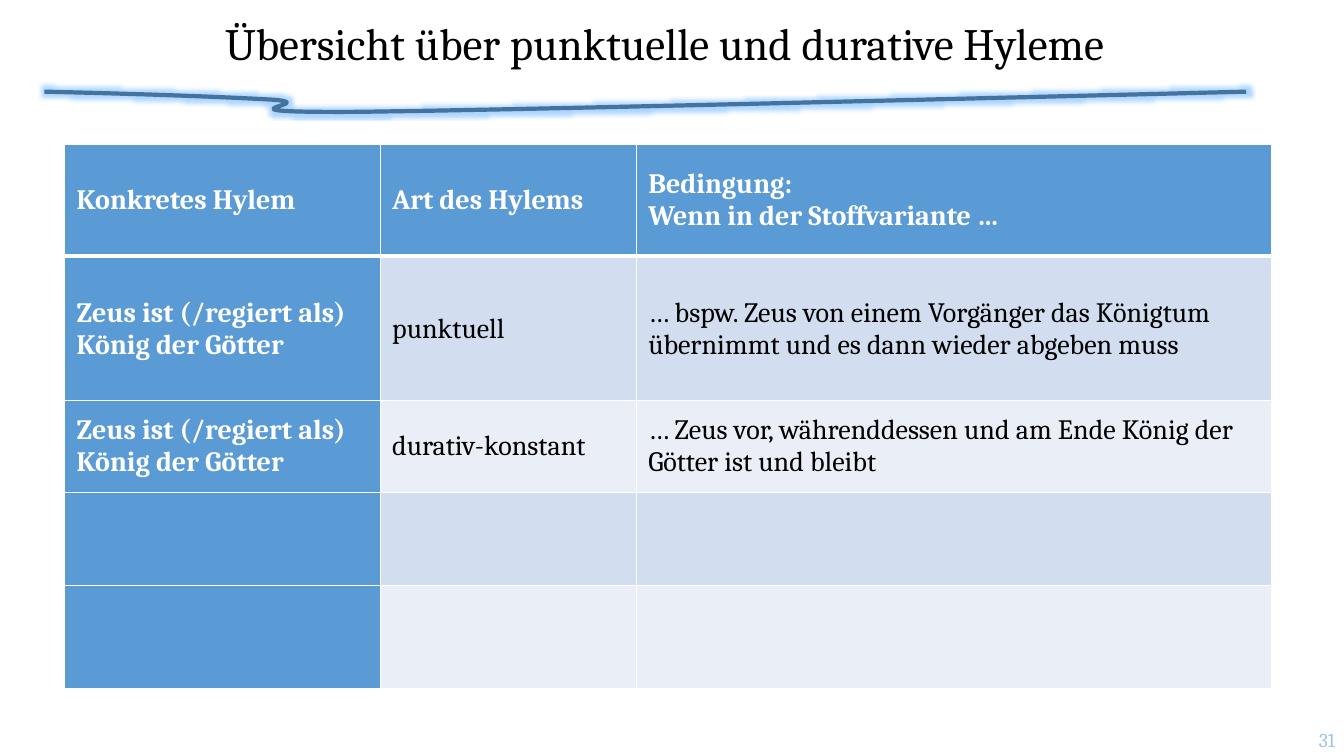
import dataclasses
import typing

import lxml.etree
import pptx
import pptx.dml.color
import pptx.enum.text
import pptx.oxml.ns
import pptx.util

Inches = pptx.util.Inches
Pt = pptx.util.Pt
Align = pptx.enum.text.PP_ALIGN
Middle = pptx.enum.text.MSO_ANCHOR.MIDDLE
Point = tuple[float, float]


@dataclasses.dataclass(frozen=True)
class Theme:
    font: str = "Cambria"
    black: str = "000000"
    white: str = "FFFFFF"
    blue: str = "5B9BD5"
    stroke: str = "43739E"
    glow: str = "3399FF"
    number: str = "9DC3E6"
    bands: tuple[str, str] = ("D2DEEF", "EAEFF7")
    title_size: int = 32
    table_size: int = 20
    number_size: int = 14


@dataclasses.dataclass(frozen=True)
class Row:
    height: float
    top: float
    bottom: float
    texts: tuple[str, str, str] = ("", "", "")


THEME = Theme()
WIDTHS = (3.13, 2.54, 6.3)
HYLEM = "Zeus ist (/regiert als) König der Götter"
ROWS = (
    Row(1.11, 0.05, 0.05, (
        "Konkretes Hylem",
        "Art des Hylems",
        "Bedingung:\nWenn in der Stoffvariante …",
    )),
    Row(1.43, 0.05, 0.02, (
        HYLEM,
        "punktuell",
        "… bspw. Zeus von einem Vorgänger das Königtum "
        "übernimmt und es dann wieder abgeben muss",
    )),
    Row(0.92, 0.02, 0.02, (
        HYLEM,
        "durativ-konstant",
        "… Zeus vor, währenddessen und am Ende König der "
        "Götter ist und bleibt",
    )),
    Row(0.92, 0.02, 0.02),
    Row(1.02, 0.02, 0.02),
)
START = (0.44, 0.91)
CURVES = (
    ((1.31, 0.93), (2.19, 0.96), (2.71, 0.99)),
    ((3.23, 1.03), (1.95, 1.12), (3.56, 1.11)),
    ((5.17, 1.09), (8.76, 1.0), (12.36, 0.91)),
)
STEPS = 24


def rgb(color: str) -> pptx.dml.color.RGBColor:
    return pptx.dml.color.RGBColor.from_string(color)


def add_node(parent: typing.Any, tag: str, **values: str) -> typing.Any:
    return lxml.etree.SubElement(parent, pptx.oxml.ns.qn(tag), values)


def style_text(frame: typing.Any, size: int, color: str, bold: bool = False,
               align: typing.Any = Align.LEFT) -> None:
    for par in frame.paragraphs:
        par.alignment = align
        for run in par.runs:
            run.font.name = THEME.font
            run.font.size = Pt(size)
            run.font.bold = bold
            run.font.color.rgb = rgb(color)


def add_title(slide: typing.Any) -> None:
    title = slide.shapes.title
    title.left, title.top = Inches(0.46), Inches(0)
    title.width, title.height = Inches(12.27), Inches(0.91)
    frame = title.text_frame
    frame.text = "Übersicht über punktuelle und durative Hyleme"
    frame.vertical_anchor = Middle
    frame.paragraphs[0].line_spacing = 0.9
    style_text(frame, THEME.title_size, THEME.black, align=Align.CENTER)


def trace(start: Point, ends: tuple[Point, Point, Point]) -> list[Point]:
    points = []
    for step in range(1, STEPS + 1):
        t = step / STEPS
        u = 1 - t
        parts = (u ** 3, 3 * u * u * t, 3 * u * t * t, t ** 3)
        x, y = (sum(part * point[axis]
                    for part, point in zip(parts, (start, *ends)))
                for axis in (0, 1))
        points.append((Inches(x), Inches(y)))
    return points


def add_stroke(slide: typing.Any) -> None:
    builder = slide.shapes.build_freeform(Inches(START[0]), Inches(START[1]))
    start = START
    for curve in CURVES:
        builder.add_line_segments(trace(start, curve), close=False)
        start = curve[-1]
    stroke = builder.convert_to_shape()
    stroke.fill.background()
    stroke.line.color.rgb = rgb(THEME.stroke)
    stroke.line.width = Pt(3)
    stroke.shadow.inherit = False
    effects = stroke._element.spPr.find(pptx.oxml.ns.qn("a:effectLst"))
    glow = add_node(effects, "a:glow", rad=str(Pt(5)))
    color = add_node(glow, "a:srgbClr", val=THEME.glow)
    add_node(color, "a:alpha", val="40000")


def set_edges(cell: typing.Any, top: int, bottom: int) -> None:
    props = cell._tc.get_or_add_tcPr()
    edges = (("L", 1), ("R", 1), ("T", top), ("B", bottom))
    for place, (side, width) in enumerate(edges):
        line = add_node(props, f"a:ln{side}", w=str(Pt(width)))
        fill = add_node(line, "a:solidFill")
        add_node(fill, "a:srgbClr", val=THEME.white)
        props.insert(place, line)


def fill_cell(cell: typing.Any, row: Row, down: int, across: int) -> None:
    head = down == 0 or across == 0
    cell.fill.solid()
    cell.fill.fore_color.rgb = rgb(
        THEME.blue if head else THEME.bands[(down - 1) % 2])
    cell.vertical_anchor = Middle
    cell.margin_left = Inches(0.12)
    cell.margin_right = Inches(0 if across == 2 else 0.07)
    cell.margin_top = Inches(row.top)
    cell.margin_bottom = Inches(row.bottom)
    if row.texts[across]:
        cell.text_frame.text = row.texts[across]
        style_text(cell.text_frame, THEME.table_size,
                   THEME.white if head else THEME.black, head)
    set_edges(cell, 3 if down == 1 else 1, 3 if down == 0 else 1)


def add_grid(slide: typing.Any) -> None:
    table = slide.shapes.add_table(
        len(ROWS), len(WIDTHS), Inches(0.64), Inches(1.43),
        Inches(sum(WIDTHS)), Inches(sum(row.height for row in ROWS))).table
    for column, width in zip(table.columns, WIDTHS):
        column.width = Inches(width)
    for down, row in enumerate(ROWS):
        table.rows[down].height = Inches(row.height)
        for across in range(len(WIDTHS)):
            fill_cell(table.cell(down, across), row, down, across)


def add_number(slide: typing.Any) -> None:
    frame = slide.shapes.add_textbox(
        Inches(12.61), Inches(7.19), Inches(0.73), Inches(0.29)).text_frame
    frame.word_wrap = True
    frame.vertical_anchor = Middle
    frame.text = "31"
    style_text(frame, THEME.number_size, THEME.number, align=Align.RIGHT)


def main() -> None:
    deck = pptx.Presentation()
    deck.slide_width, deck.slide_height = Inches(13.33), Inches(7.5)
    slide = deck.slides.add_slide(deck.slide_layouts[5])
    add_stroke(slide)
    add_title(slide)
    add_grid(slide)
    add_number(slide)
    deck.save("out.pptx")


if __name__ == "__main__":
    main()
